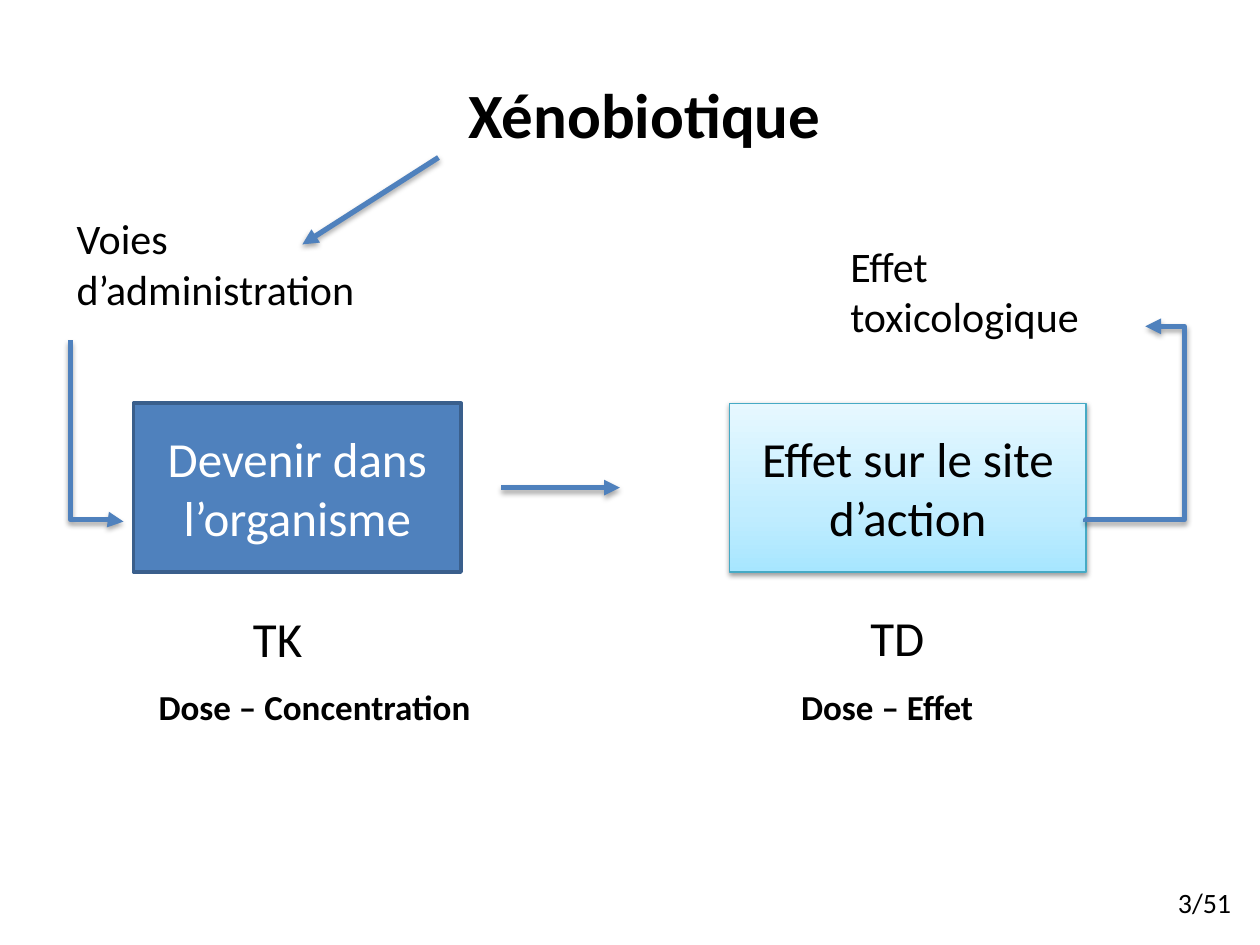
import pptx
import pptx.dml.color
import pptx.enum.shapes
import pptx.enum.text
import pptx.oxml
import pptx.oxml.ns
import pptx.util

Inches = pptx.util.Inches
Pt = pptx.util.Pt
PP_ALIGN = pptx.enum.text.PP_ALIGN
CONNECTOR = pptx.enum.shapes.MSO_CONNECTOR

FONT = "Calibri"
COLORS = {
    "text": "000000",
    "box_text": "FFFFFF",
    "blue": "4F81BD",
    "blue_edge": "3A5F8C",
    "cyan_edge": "46AAC5",
    "shadow": "000000",
}
CYAN_STOPS = [(0, "A7E6FF"), (35, "C1EDFF"), (100, "E7F8FF")]


def rgb(name):
    return pptx.dml.color.RGBColor.from_string(COLORS[name])


def make_element(tag, content="", attributes=""):
    namespace = pptx.oxml.ns.nsdecls("a")
    return pptx.oxml.parse_xml(f"<a:{tag} {namespace} {attributes}>{content}</a:{tag}>")


def shadow_effects(opacity, distance):
    """Soft shadow that falls straight down; distance in points."""
    return make_element(
        "effectLst",
        f'<a:outerShdw blurRad="{Pt(3.1)}" dist="{Pt(distance)}" dir="5400000" rotWithShape="0">'
        f'<a:srgbClr val="{COLORS["shadow"]}"><a:alpha val="{opacity * 1000}"/></a:srgbClr>'
        "</a:outerShdw>",
    )


def write_text(shape, text, size, color="text", bold=False, align=PP_ALIGN.LEFT):
    text_frame = shape.text_frame
    text_frame.word_wrap = True
    text_frame.text = text
    paragraph = text_frame.paragraphs[0]
    paragraph.alignment = align
    font = paragraph.runs[0].font
    font.name, font.size, font.bold = FONT, Pt(size), bold
    font.color.rgb = rgb(color)


def add_label(slide, text, left, top, width, height, size, **style):
    box = slide.shapes.add_textbox(Inches(left), Inches(top), Inches(width), Inches(height))
    write_text(box, text, size, **style)


def add_box(slide, text, left, width, edge, edge_width, text_color):
    box = slide.shapes.add_shape(
        pptx.enum.shapes.MSO_SHAPE.RECTANGLE,
        Inches(left), Inches(3.2), Inches(width), Inches(1.34))
    box.shadow.inherit = False
    box.fill.solid()
    box.fill.fore_color.rgb = rgb("blue")
    box.line.color.rgb = rgb(edge)
    box.line.width = Pt(edge_width)
    box.text_frame.vertical_anchor = pptx.enum.text.MSO_ANCHOR.MIDDLE
    write_text(box, text, 28, color=text_color, align=PP_ALIGN.CENTER)
    return box


def apply_gradient_and_shadow(box):
    properties = box._element.spPr
    stops = "".join(
        f'<a:gs pos="{position * 1000}"><a:srgbClr val="{color}"/></a:gs>'
        for position, color in CYAN_STOPS)
    gradient = make_element(
        "gradFill", f'<a:gsLst>{stops}</a:gsLst><a:lin ang="16200000" scaled="1"/>',
        'rotWithShape="1"')
    properties.replace(properties.find(pptx.oxml.ns.qn("a:solidFill")), gradient)
    properties.replace(properties.find(pptx.oxml.ns.qn("a:effectLst")), shadow_effects(38, 1.6))


def add_arrow(slide, start, end, kind=CONNECTOR.STRAIGHT):
    arrow = slide.shapes.add_connector(kind, *(Inches(value) for value in start + end))
    arrow.line.color.rgb = rgb("blue")
    arrow.line.width = Pt(3)
    arrow.line._get_or_add_ln().append(make_element("tailEnd", attributes='type="triangle"'))
    arrow._element.spPr.append(shadow_effects(35, 1.8))
    return arrow


def add_bent_arrow(slide, start, end, rotation, preset, adjustments):
    """Elbow arrow; start and end are its corners before the rotation in degrees."""
    arrow = add_arrow(slide, start, end, CONNECTOR.ELBOW)
    properties = arrow._element.spPr
    properties.find(pptx.oxml.ns.qn("a:xfrm")).set("rot", str(rotation * 60000))
    guides = "".join(
        f'<a:gd name="adj{number}" fmla="val {round(value * 100000)}"/>'
        for number, value in enumerate(adjustments, 1))
    geometry = make_element("prstGeom", f"<a:avLst>{guides}</a:avLst>", f'prst="{preset}"')
    properties.replace(properties.find(pptx.oxml.ns.qn("a:prstGeom")), geometry)


def main():
    presentation = pptx.Presentation()
    presentation.slide_width, presentation.slide_height = Inches(10), Inches(7.5)
    slide = presentation.slides.add_slide(presentation.slide_layouts[6])

    # Title and the route into the body
    add_label(slide, "Xénobiotique", 3.62, 0.55, 3.03, 0.71, 36, bold=True)
    add_arrow(slide, (3.48, 1.25), (2.4, 1.94))
    add_label(slide, "Voies d’administration", 0.51, 1.64, 2.44, 0.91, 24)
    add_label(slide, "Effet toxicologique", 6.65, 1.86, 2.44, 0.91, 24)

    # The two stages and the arrows that link them
    add_box(slide, "Devenir dans l’organisme", 1.06, 2.6, "blue_edge", 2, "box_text")
    add_bent_arrow(slide, (1.49, 3.21), (0.05, 3.63), 270, "bentConnector3", [0.99])
    add_arrow(slide, (3.98, 3.87), (4.92, 3.87))
    action_box = add_box(slide, "Effet sur le site d’action", 5.79, 2.83, "cyan_edge", 0.75, "text")
    apply_gradient_and_shadow(action_box)
    add_bent_arrow(slide, (9.63, 3.6), (8.08, 3.13), 90, "bentConnector4", [0.01, 1.66])

    # Captions under each stage
    add_label(slide, "TK", 1.91, 4.78, 1.57, 0.57, 28)
    add_label(slide, "TD", 6.81, 4.77, 1.57, 0.57, 28)
    add_label(slide, "Dose – Concentration", 1.16, 5.39, 2.81, 0.44, 20, bold=True)
    add_label(slide, "Dose – Effet", 6.26, 5.39, 2.6, 0.44, 20, bold=True)

    # Page number
    add_label(slide, "3/51", 9.25, 6.98, 0.71, 0.37, 16, align=PP_ALIGN.JUSTIFY)

    presentation.save("out.pptx")


if __name__ == "__main__":
    main()
